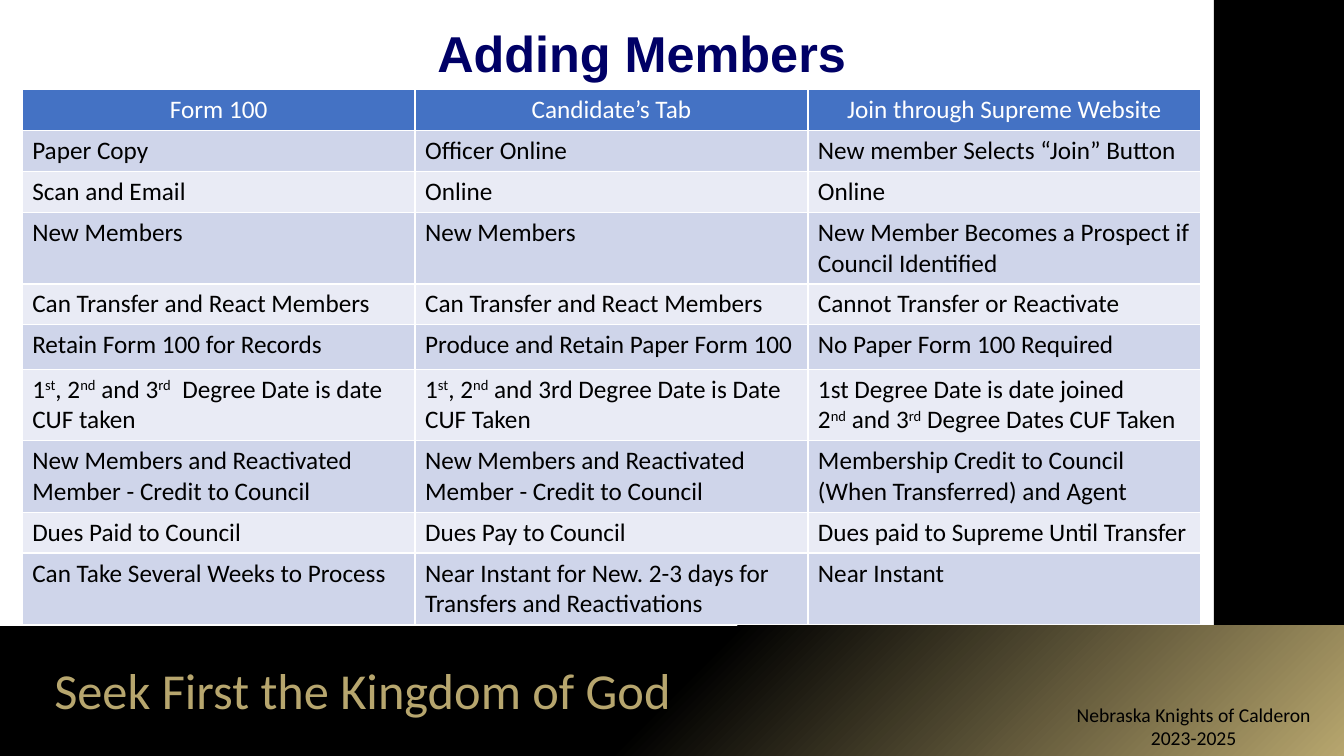
from copy import deepcopy

from pptx import Presentation
from pptx.dml.color import RGBColor
from pptx.enum.shapes import MSO_SHAPE
from pptx.enum.text import MSO_ANCHOR, PP_ALIGN
from pptx.util import Inches, Pt

RECT = MSO_SHAPE.RECTANGLE
CENTER, LEFT = PP_ALIGN.CENTER, PP_ALIGN.LEFT
TOP, MIDDLE = MSO_ANCHOR.TOP, MSO_ANCHOR.MIDDLE
WIDE, HIGH, BAND = 13.33, 7.5, 1.29
GOLD, BLACK, WHITE = "B7A66E", "000000", "FFFFFF"


def color(code):
    return RGBColor.from_string(code)


def style(para, size, face, code, align, bold=False):
    para.alignment = align
    font = para.font
    font.size, font.name, font.bold = Pt(size), face, bold
    font.color.rgb = color(code)


prs = Presentation()
prs.slide_width, prs.slide_height = Inches(WIDE), Inches(HIGH)
slide = prs.slides.add_slide(prs.slide_layouts[6])
shapes = slide.shapes

# Black side bar
bar = shapes.add_shape(RECT, Inches(WIDE - BAND), 0, Inches(BAND), Inches(HIGH))
bar.fill.solid()
bar.fill.fore_color.rgb = color(BLACK)

# Bottom band: an upright bar turned on its side, with three colour stops
band = shapes.add_shape(RECT, Inches((WIDE - BAND) / 2),
                        Inches(HIGH - (WIDE + BAND) / 2),
                        Inches(BAND), Inches(WIDE))
band.rotation = 270
band.fill.gradient()
band.fill.gradient_angle = 225
stops = band._element.xpath(".//a:gsLst")[0]
stops.insert(0, deepcopy(stops[0]))
for stop, (place, code) in zip(band.fill.gradient_stops,
                               [(0, BLACK), (0.5, BLACK), (1, GOLD)]):
    stop.position = place
    stop.color.rgb = color(code)

for part in (bar, band):
    part.shadow.inherit = False
    part.line.fill.background()

# Title, motto and footer
labels = [
    ("Adding Members", 0.92, 0.19, 10.89, 0.73,
     36, "Arial", "000066", CENTER, True, MIDDLE),
    ("Seek First the Kingdom of God", 0.44, 6.49, 6.67, 0.71,
     36, "Calibri", GOLD, LEFT, False, TOP),
    ("Nebraska Knights of Calderon 2023-2025", 10.51, 6.92, 2.66, 0.57,
     14, "Calibri", BLACK, CENTER, False, TOP),
]
for text, x, y, w, h, size, face, code, align, bold, anchor in labels:
    box = shapes.add_textbox(Inches(x), Inches(y), Inches(w), Inches(h))
    frame = box.text_frame
    frame.word_wrap = True
    frame.vertical_anchor = anchor
    para = frame.paragraphs[0]
    para.text = text
    style(para, size, face, code, align, bold)
    if anchor == MIDDLE:
        para.line_spacing = 0.9

# Table: ^ marks the start and end of a superscript
credit = "New Members and Reactivated Member - Credit to Council"
ONE, MORE, TWO = Pt(29.2), Inches(0.44), Inches(0.71)
rows = [
    (ONE, "Form 100", "Candidate’s Tab", "Join through Supreme Website"),
    (ONE, "Paper Copy", "Officer Online", "New member Selects “Join” Button"),
    (ONE, "Scan and Email", "Online", "Online"),
    (TWO, "New Members", "New Members",
     "New Member Becomes a Prospect if Council Identified"),
    (ONE, "Can Transfer and React Members", "Can Transfer and React Members",
     "Cannot Transfer or Reactivate"),
    (MORE, "Retain Form 100 for Records", "Produce and Retain Paper Form 100",
     "No Paper Form 100 Required"),
    (TWO, "1^st^, 2^nd^ and 3^rd^  Degree Date is date CUF taken",
     "1^st^, 2^nd^ and 3rd Degree Date is Date CUF Taken",
     "1st Degree Date is date joined\n"
     "2^nd^ and 3^rd^ Degree Dates CUF Taken"),
    (TWO, credit, credit,
     "Membership Credit to Council (When Transferred) and Agent"),
    (ONE, "Dues Paid to Council", "Dues Pay to Council",
     "Dues paid to Supreme Until Transfer"),
    (TWO, "Can Take Several Weeks to Process",
     "Near Instant for New. 2-3 days for Transfers and Reactivations",
     "Near Instant"),
]
table = shapes.add_table(len(rows), 3, Inches(0.22), Inches(0.89),
                         Inches(11.69), sum(row[0] for row in rows)).table
for r, (tall, *texts) in enumerate(rows):
    table.rows[r].height = tall
    head = r == 0
    shade = "4472C4" if head else ("E9EBF5", "CFD5EA")[r % 2]
    for c, text in enumerate(texts):
        cell = table.cell(r, c)
        cell.fill.solid()
        cell.fill.fore_color.rgb = color(shade)
        frame = cell.text_frame
        for n, line in enumerate(text.split("\n")):
            para = frame.add_paragraph() if n else frame.paragraphs[0]
            for k, piece in enumerate(line.split("^")):
                run = para.add_run()
                run.text = piece
                if k % 2:
                    run._r.get_or_add_rPr().set("baseline", "30000")
            style(para, 18, "Calibri", WHITE if head else BLACK,
                  CENTER if head else LEFT)

prs.save("out.pptx")
